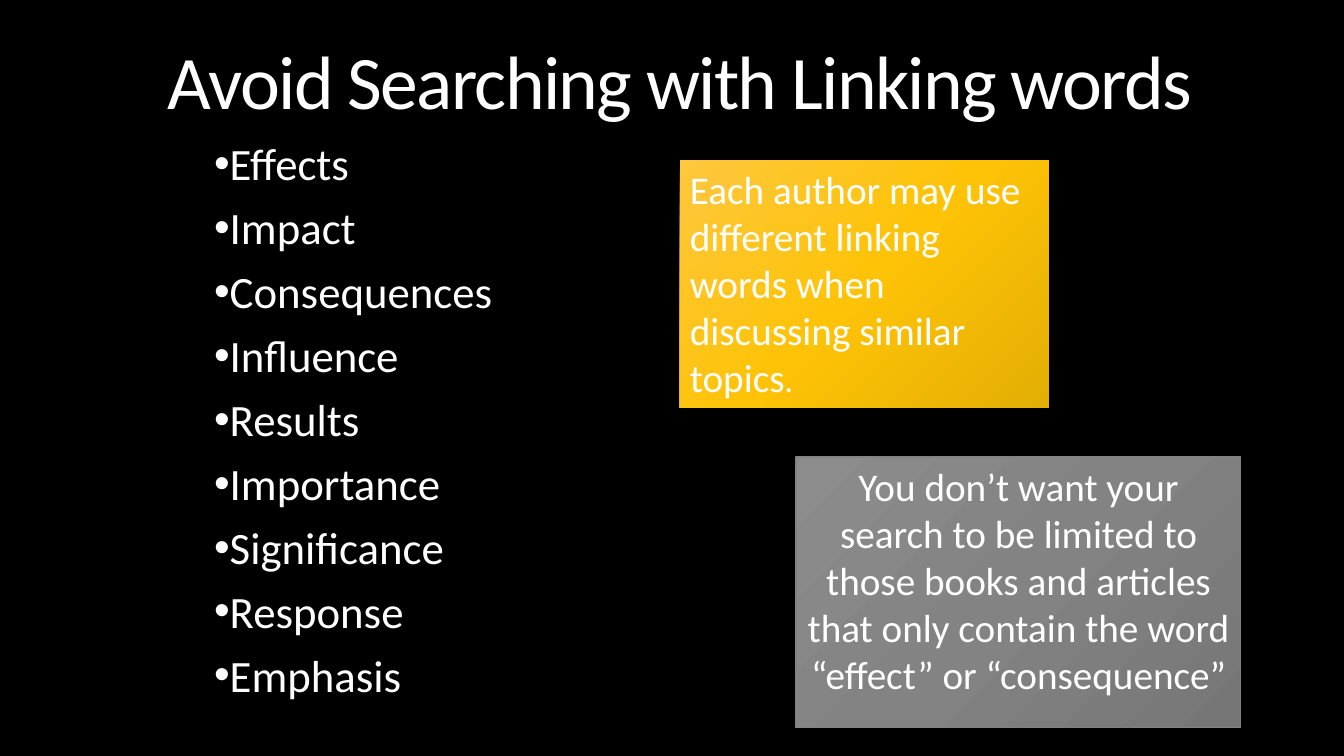
from copy import deepcopy

from lxml.etree import SubElement
from pptx import Presentation
from pptx.dml.color import RGBColor
from pptx.enum.shapes import MSO_SHAPE as Shape
from pptx.enum.text import MSO_ANCHOR as Anchor, MSO_AUTO_SIZE as AutoSize, PP_ALIGN as Align
from pptx.oxml.ns import qn
from pptx.util import Pt

PX = 12192000 / 1344
FONT = "Calibri"
BULLET_FONT = "Arial"
COLOURS = {
    "background": "000000",
    "text": "FFFFFF",
    "grey_line": "838383",
}
GRADIENTS = {
    "gold": ("FEC73E", "FEC306", "E4AF05"),
    "grey": ("8C8C8C", "838383", "767676"),
}
LINKING_WORDS = [
    "Effects", "Impact", "Consequences", "Influence", "Results",
    "Importance", "Significance", "Response", "Emphasis",
]


def px(length):
    """Turn whole pixels into EMU."""
    return round(length * PX)


def rgb(hex_colour):
    """Turn a hex string into a colour."""
    return RGBColor.from_string(hex_colour)


def place(part, box):
    """Move a part to its box of left, top, width and height."""
    part.left, part.top, part.width, part.height = map(px, box)


def write(paragraph, text, size, align=Align.LEFT, line_spacing=None,
          space_before=0, tracking=None):
    """Add a formatted run to a paragraph."""
    paragraph.alignment = align
    paragraph.space_before = Pt(space_before)
    if line_spacing:
        paragraph.line_spacing = line_spacing
    run = paragraph.add_run()
    run.text = text
    run.font.name = FONT
    run.font.size = Pt(size)
    run.font.color.rgb = rgb(COLOURS["text"])
    if tracking:
        run.font._element.set("spc", str(round(tracking * 100)))


def add_bullet(paragraph, indent):
    """Give a paragraph a hanging round bullet."""
    properties = paragraph._p.get_or_add_pPr()
    properties.set("marL", str(px(indent)))
    properties.set("indent", str(-px(indent)))
    SubElement(properties, qn("a:buFont"), typeface=BULLET_FONT)
    SubElement(properties, qn("a:buChar"), char="•")


def fill_gradient(panel, hex_colours):
    """Fill a panel with evenly spaced colours running to the lower right."""
    panel.fill.gradient()
    panel.fill.gradient_angle = 315
    stop_list = panel._element.spPr.find(".//" + qn("a:gsLst"))
    stop_list.append(deepcopy(stop_list[-1]))
    for index, (stop, colour) in enumerate(zip(panel.fill.gradient_stops, hex_colours)):
        stop.position = index / (len(hex_colours) - 1)
        stop.color.rgb = rgb(colour)


def build_heading(slide, box):
    """Place the slide title."""
    heading = slide.shapes.title
    place(heading, box)
    frame = heading.text_frame
    frame.auto_size = AutoSize.NONE
    frame.vertical_anchor = Anchor.MIDDLE
    write(frame.paragraphs[0], "Avoid Searching with Linking words", 54,
          align=Align.CENTER, line_spacing=0.85, tracking=-1.2)


def build_word_list(slide, box):
    """Place the bulleted list of linking words."""
    word_list = slide.placeholders[1]
    place(word_list, box)
    frame = word_list.text_frame
    frame.auto_size = AutoSize.NONE
    frame.vertical_anchor = Anchor.TOP
    for index, word in enumerate(LINKING_WORDS):
        paragraph = frame.add_paragraph() if index else frame.paragraphs[0]
        write(paragraph, word, 32, line_spacing=0.85, space_before=13)
        add_bullet(paragraph, 10)


def build_note(slide, box, gradient, pieces, align=Align.LEFT, outline=None):
    """Place a gradient panel holding (text, size) pieces in one paragraph."""
    note = slide.shapes.add_shape(Shape.RECTANGLE, *map(px, box))
    note.shadow.inherit = False
    fill_gradient(note, GRADIENTS[gradient])
    if outline:
        note.line.color.rgb = rgb(COLOURS[outline])
        note.line.width = Pt(0.75)
    else:
        note.line.fill.background()
    frame = note.text_frame
    frame.word_wrap = True
    frame.vertical_anchor = Anchor.TOP
    for text, size in pieces:
        write(frame.paragraphs[0], text, size, align=align)


def main():
    """Build and save the slide."""
    deck = Presentation()
    deck.slide_width, deck.slide_height = px(1344), px(756)
    slide = deck.slides.add_slide(deck.slide_layouts[1])
    slide.background.fill.solid()
    slide.background.fill.fore_color.rgb = rgb(COLOURS["background"])
    build_heading(slide, (119, 32, 1122, 109))
    build_word_list(slide, (204, 139, 716, 541))
    build_note(slide, (680, 160, 369, 248), "gold", [
        ("Each author may use different linking words when discussing similar topics", 28),
        (".", 24),
    ])
    build_note(slide, (796, 457, 445, 271), "grey", [
        ("You don’t want your search to be limited to those books and articles "
         "that only contain the word “effect” or “consequence”", 28),
    ], align=Align.CENTER, outline="grey_line")
    deck.save("out.pptx")


if __name__ == "__main__":
    main()
